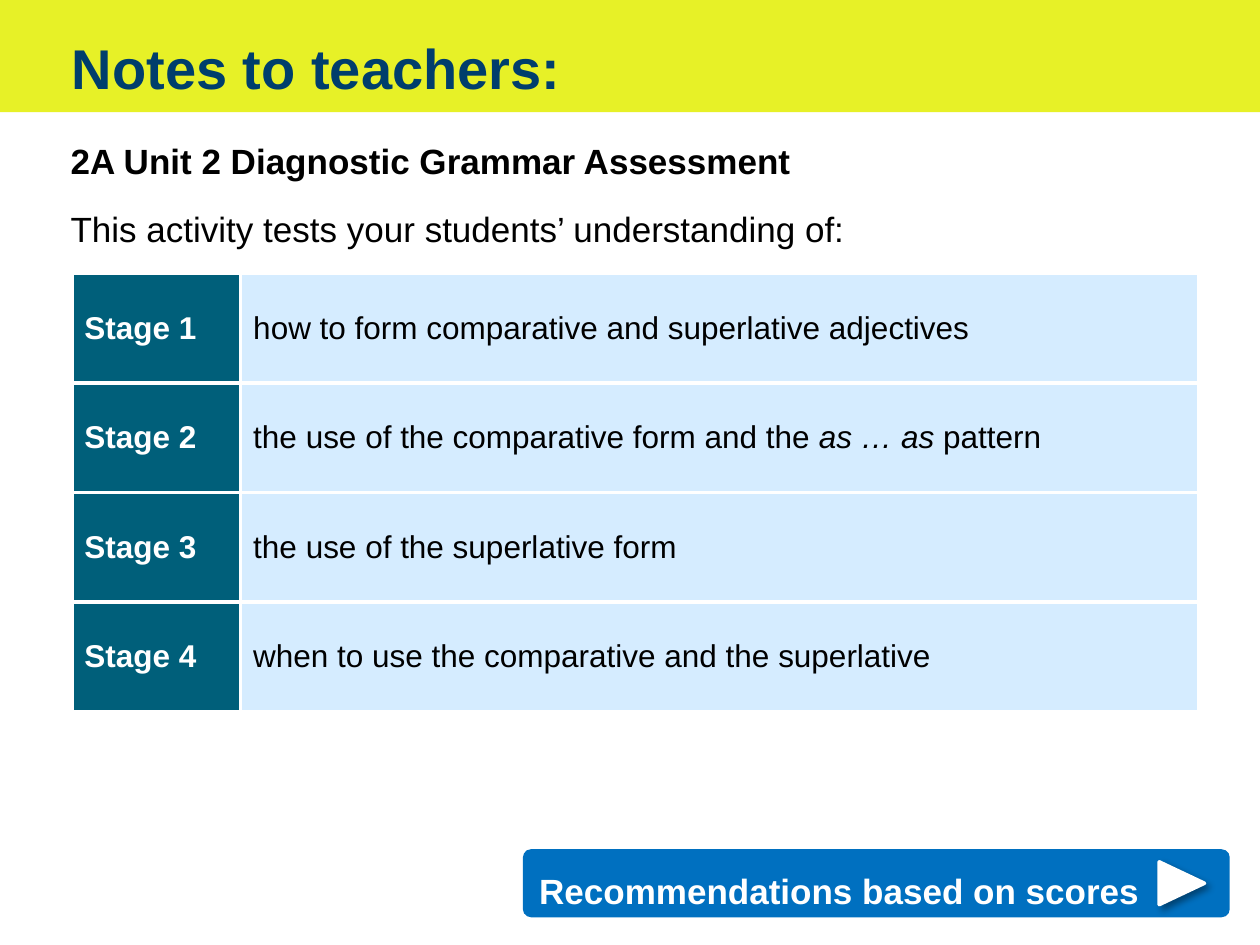
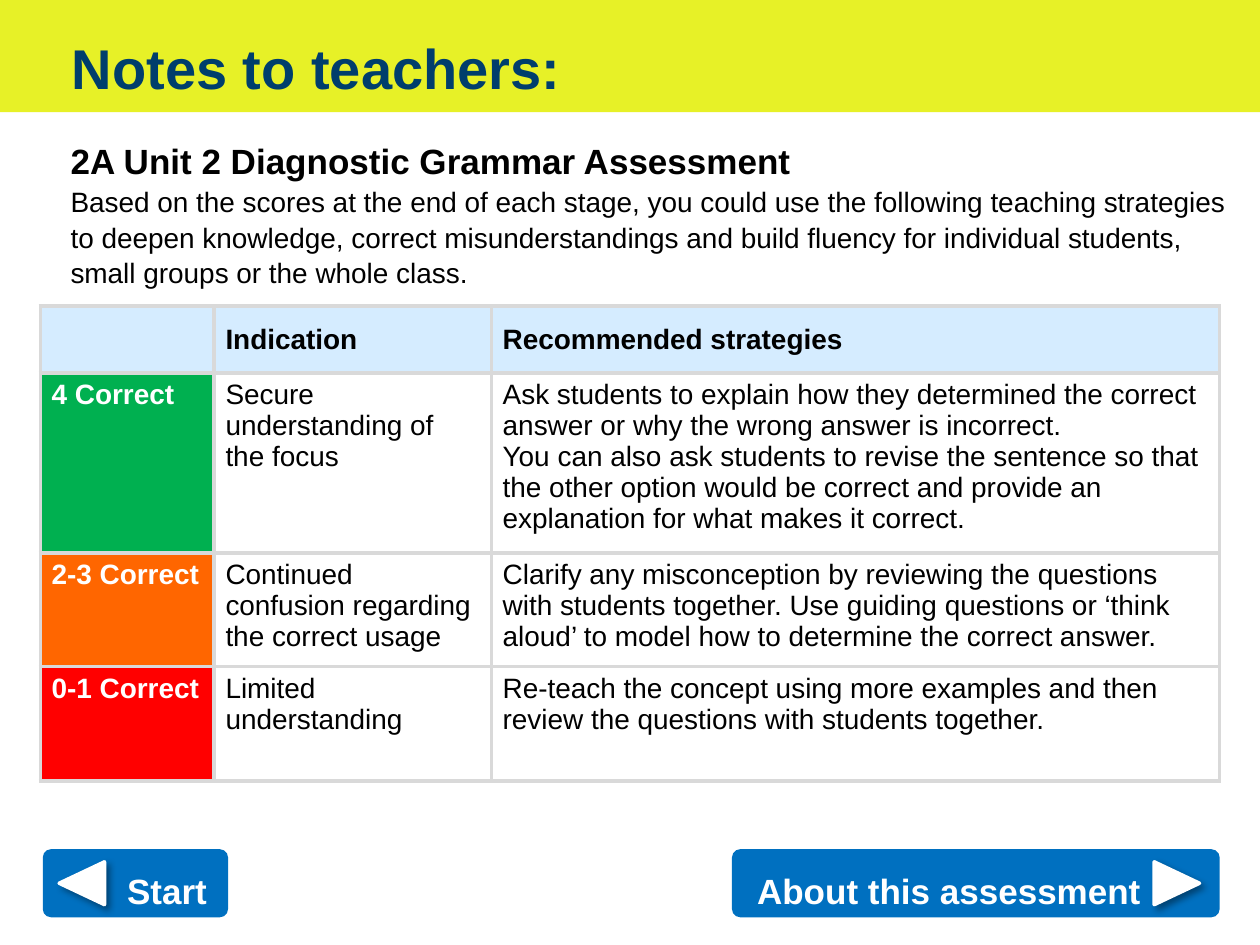
import pptx
import pptx.util
import pptx.dml.color
import pptx.enum.shapes
import pptx.enum.text
import pptx.oxml.ns
from lxml import etree

Pt = pptx.util.Pt
SHAPE = pptx.enum.shapes.MSO_SHAPE
ANCHOR = pptx.enum.text.MSO_ANCHOR
FIT = pptx.enum.text.MSO_AUTO_SIZE
ALIGN = pptx.enum.text.PP_ALIGN

# Shared style
FONT = "Arial"
WHITE, BLACK, GREY = "FFFFFF", "000000", "D9D9D9"
LIME, NAVY, TEAL = "E7F127", "003E6C", "005F7A"
PALE, BLUE = "D5ECFF", "0070C0"
GREEN, AMBER, RED = "00B050", "FF6600", "FF0000"
COLS, ROWS = 100, 75
UNIT = "2A Unit 2 Diagnostic Grammar Assessment"


def rgb(code):
    return pptx.dml.color.RGBColor.from_string(code)


def node(parent, tag, **attrs):
    return etree.SubElement(parent, pptx.oxml.ns.qn("a:" + tag),
                            {key: str(val) for key, val in attrs.items()})


class Deck:
    """Holds the style, the grid and the current slide."""

    def __init__(self):
        self.file = pptx.Presentation()
        self.file.slide_width = pptx.util.Inches(10)
        self.file.slide_height = pptx.util.Inches(7.5)
        self.col = self.file.slide_width / COLS
        self.row = self.file.slide_height / ROWS

    def wide(self, cols):
        return round(cols * self.col)

    def high(self, rows):
        return round(rows * self.row)

    def box(self, left, top, width, height):
        return self.wide(left), self.high(top), self.wide(width), self.high(height)

    def style(self, para, size, color, bold, space=None):
        para.alignment = ALIGN.LEFT
        para.space_before = Pt(0)
        if space:
            para.line_spacing = space
        font = para.font
        font.name, font.size, font.bold = FONT, Pt(size), bold
        font.color.rgb = rgb(color)

    def shape(self, kind, spot, color, home=None):
        item = (home or self.slide.shapes).add_shape(kind, *self.box(*spot))
        item.shadow.inherit = False
        item.fill.solid()
        item.fill.fore_color.rgb = rgb(color)
        item.line.fill.background()
        return item

    def frame(self, holder, spot):
        holder.left, holder.top, holder.width, holder.height = self.box(*spot)
        text = holder.text_frame
        text.margin_left = text.margin_top = text.margin_right = text.margin_bottom = 0
        text.word_wrap, text.auto_size = True, FIT.NONE
        text.vertical_anchor = ANCHOR.TOP
        return text

    def page(self, title):
        """Start a slide with its band and title."""
        self.slide = self.file.slides.add_slide(self.file.slide_layouts[1])
        band = self.shape(SHAPE.RECTANGLE, (0, 0, COLS, 8.9), LIME)
        self.slide.shapes._spTree.insert(2, band._element)
        text = self.frame(self.slide.shapes.title, (5.7, 2.4, 68.8, 8.5))
        text.text = title
        self.style(text.paragraphs[0], 32, NAVY, True, Pt(40))

    def body(self, width, height, lines):
        """Lines are (text, size, bold, spacing)."""
        text = self.frame(self.slide.placeholders[1], (5.6, 9.1, width, height))
        text.text = "\n".join(line[0] for line in lines)
        for para, (_, size, bold, space) in zip(text.paragraphs, lines):
            props = para._p.get_or_add_pPr()
            props.set("marL", "0")
            props.set("indent", "0")
            node(props, "buNone")
            self.style(para, size, BLACK, bold, space)

    def edge(self, cell, color):
        props = cell._tc.get_or_add_tcPr()
        for side in ("lnL", "lnR", "lnT", "lnB"):
            line = node(props, side, w=Pt(2.25))
            node(node(line, "solidFill"), "srgbClr", val=color)

    def cell(self, cell, words, look, size, line, pad):
        fill, color, bold, anchor = look
        self.edge(cell, line)
        cell.fill.solid()
        cell.fill.fore_color.rgb = rgb(fill)
        cell.vertical_anchor = anchor
        cell.margin_left = cell.margin_right = self.wide(pad)
        for i, part in enumerate(words.split("\n")):
            text = cell.text_frame
            para = text.add_paragraph() if i else text.paragraphs[0]
            self.style(para, size, color, bold)
            # Words between asterisks are italic
            for j, piece in enumerate(part.split("*")):
                if piece:
                    run = para.add_run()
                    run.text = piece
                    if j % 2:
                        run.font.italic = True

    def table(self, left, top, cols, rows, data, look, size, line, pad):
        """look(row, column) gives fill, text colour, bold and anchor."""
        spot = self.box(left, top, sum(cols), sum(rows))
        grid = self.slide.shapes.add_table(len(rows), len(cols), *spot).table
        grid.first_row = grid.horz_banding = False
        for col, width in zip(grid.columns, cols):
            col.width = self.wide(width)
        for r, (height, words) in enumerate(zip(rows, data)):
            grid.rows[r].height = self.high(height)
            for c, word in enumerate(words):
                self.cell(grid.cell(r, c), word, look(r, c), size, line, pad)

    def button(self, words, left, width, pad, tip, turn=90):
        """A rounded button with an arrow whose left edge is at tip."""
        group = self.slide.shapes.add_group_shape().shapes
        plate = self.shape(SHAPE.ROUNDED_RECTANGLE, (left, 67.4, width, 5.4), BLUE, group)
        plate.adjustments[0] = 0.12
        text = plate.text_frame
        text.text = words
        text.word_wrap, text.vertical_anchor = True, ANCHOR.MIDDLE
        text.margin_left = self.wide(pad)
        self.style(text.paragraphs[0], 20, WHITE, True, Pt(32))
        arrow = self.shape(SHAPE.ISOSCELES_TRIANGLE, (tip, 68.3, 3.4, 3.6), WHITE, group)
        arrow.rotation = turn
        arrow.line.color.rgb = rgb(WHITE)
        arrow.line.width = Pt(2)
        glow = arrow._element.spPr.find(pptx.oxml.ns.qn("a:effectLst"))
        cast = node(glow, "outerShdw", blurRad=Pt(4), dist=Pt(3),
                    dir=45 * 60000, algn="tl", rotWithShape=0)
        node(node(cast, "srgbClr", val=BLACK), "alpha", val=40000)


def stage(row, col):
    return (PALE, BLACK, False, ANCHOR.MIDDLE) if col else (TEAL, WHITE, True, ANCHOR.MIDDLE)


def score(row, col):
    if row == 0:
        return PALE, BLACK, True, ANCHOR.MIDDLE
    if col == 0:
        return (GREEN, AMBER, RED)[row - 1], WHITE, True, ANCHOR.TOP
    return WHITE, BLACK, False, ANCHOR.TOP


def main():
    deck = Deck()
    head = (UNIT, 20, True, 1.6)

    # Stages tested
    deck.page("Notes to teachers:")
    deck.body(87, 11.6, [
        head,
        ("This activity tests your students’ understanding of:", 20, False, 1.6)])
    goals = ["how to form comparative and superlative adjectives",
             "the use of the comparative form and the *as … as *pattern",
             "the use of the superlative form",
             "when to use the comparative and the superlative"]
    data = [(f"Stage {i}", goal) for i, goal in enumerate(goals, 1)]
    deck.table(5.7, 21.7, [13.4, 76], [8.7] * 4, data, stage, 18, WHITE, 1)
    deck.button("Recommendations based on scores", 41.5, 56.1, 1.1, 92.1)

    # Strategies by score
    deck.page("Notes to teachers:")
    deck.body(91.7, 14.7, [
        head,
        ("Based on the scores at the end of each stage, you could use the following "
         "teaching strategies to deepen knowledge, correct misunderstandings and build "
         "fluency for individual students, small groups or the whole class.",
         16, False, 1.07)])
    data = [
        ("", "Indication", "Recommended strategies"),
        ("4 Correct", "Secure understanding of the focus",
         "Ask students to explain how they determined the correct answer or why the "
         "wrong answer is incorrect.\nYou can also ask students to revise the sentence "
         "so that the other option would be correct and provide an explanation for "
         "what makes it correct."),
        ("2-3 Correct", "Continued confusion regarding the correct usage",
         "Clarify any misconception by reviewing the questions with students together. "
         "Use guiding questions or ‘think aloud’ to model how to determine the "
         "correct answer."),
        ("0-1 Correct", "Limited understanding",
         "Re-teach the concept using more examples and then review the questions "
         "with students together.")]
    deck.table(3.2, 24.3, [13.8, 22, 57.8], [5.3, 14.3, 9, 9.1], data, score, 16, GREY, 0.9)
    deck.button("About this assessment", 58.1, 38.7, 1.8, 91.7)
    deck.button("Start", 3.4, 14.7, 6.5, 4.8, 270)

    deck.file.save("out.pptx")


if __name__ == "__main__":
    main()
